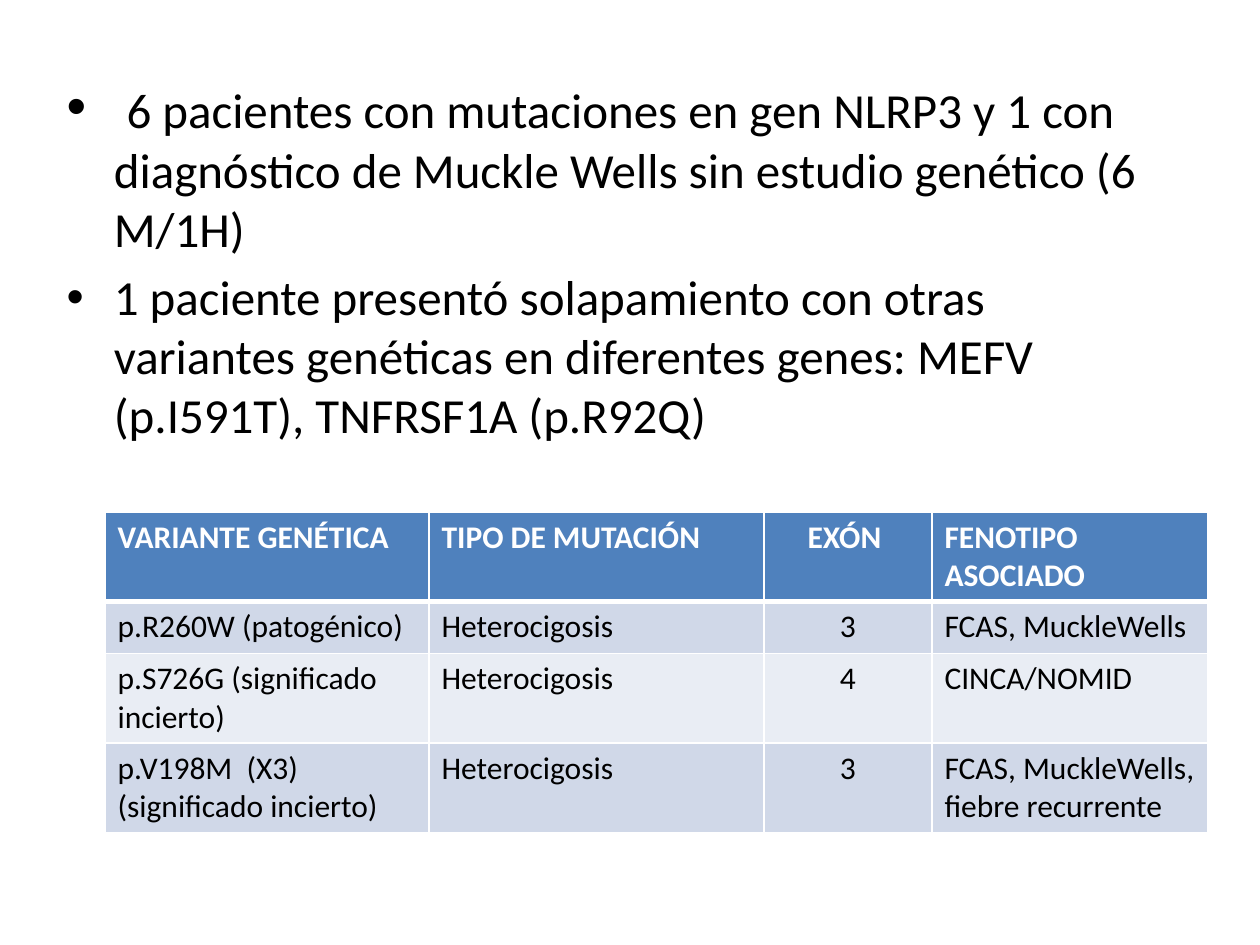
"""Builds a slide on NLRP3 mutations with two bullets and a table of variants."""
from lxml.etree import SubElement
from pptx import Presentation
from pptx.dml.color import RGBColor
from pptx.enum.text import PP_ALIGN
from pptx.oxml.ns import qn
from pptx.util import Emu, Pt

PX = 914400 / 126
COLORS = {"text": "000000", "white": "FFFFFF", "header": "4F81BD",
          "odd": "D0D8E8", "even": "E9EDF4"}
FINDINGS = [
    [(" ", 32), ("6 pacientes con mutaciones en gen NLRP3 y 1 con diagnóstico "
                 "de Muckle Wells sin estudio genético (6 M/1H)", 28)],
    [("1 paciente presentó solapamiento con otras variantes genéticas en "
      "diferentes genes: MEFV (p.I591T), TNFRSF1A (p.R92Q)", 28)],
]
VARIANTS = [
    ("VARIANTE GENÉTICA", "TIPO DE MUTACIÓN", "EXÓN ", "FENOTIPO ASOCIADO"),
    ("p.R260W (patogénico)", "Heterocigosis", "3", "FCAS, MuckleWells"),
    ("p.S726G (significado incierto)", "Heterocigosis", "4", "CINCA/NOMID"),
    ("p.V198M  (X3)(significado incierto)", "Heterocigosis", "3",
     "FCAS, MuckleWells, fiebre recurrente"),
]
COLUMN_WIDTHS = [324, 335, 168, 276]
ROW_HEIGHT = 52
EXON_COLUMN = 2
BODY_BOX = (54, 66, 1134, 764)
TABLE_LEFT, TABLE_TOP = 105, 512


def px(length):
    return Emu(round(length * PX))


def add_text(paragraph, text, size=18, color="text", bold=False, align=None):
    run = paragraph.add_run()
    run.text = text
    run.font.name = "Calibri"
    run.font.size = Pt(size)
    run.font.bold = bold
    run.font.color.rgb = RGBColor.from_string(COLORS[color])
    if align is not None:
        paragraph.alignment = align


def set_borders(cell, top, bottom):
    properties = cell._tc.get_or_add_tcPr()
    for side, width in (("L", 1), ("R", 1), ("T", top), ("B", bottom)):
        border = SubElement(properties, qn(f"a:ln{side}"), w=str(Pt(width)))
        fill = SubElement(border, qn("a:solidFill"))
        SubElement(fill, qn("a:srgbClr"), val=COLORS["white"])


def add_findings(slide):
    body = slide.placeholders[1]
    body.left, body.top, body.width, body.height = map(px, BODY_BOX)
    frame = body.text_frame
    for index, finding in enumerate(FINDINGS):
        paragraph = frame.add_paragraph() if index else frame.paragraphs[0]
        for text, size in finding:
            add_text(paragraph, text, size=size)


def add_variants(slide):
    table = slide.shapes.add_table(
        len(VARIANTS), len(COLUMN_WIDTHS), px(TABLE_LEFT), px(TABLE_TOP),
        px(sum(COLUMN_WIDTHS)), px(ROW_HEIGHT * len(VARIANTS))).table
    for column, width in zip(table.columns, COLUMN_WIDTHS):
        column.width = px(width)
    for row, values in enumerate(VARIANTS):
        table.rows[row].height = px(ROW_HEIGHT)
        header = row == 0
        band = "header" if header else "odd" if row % 2 else "even"
        for column, value in enumerate(values):
            cell = table.cell(row, column)
            set_borders(cell, top=3 if row == 1 else 1, bottom=3 if header else 1)
            cell.fill.solid()
            cell.fill.fore_color.rgb = RGBColor.from_string(COLORS[band])
            add_text(cell.text_frame.paragraphs[0], value, bold=header,
                     color="white" if header else "text",
                     align=PP_ALIGN.CENTER if column == EXON_COLUMN else None)


def main():
    presentation = Presentation()
    presentation.slide_width, presentation.slide_height = px(1260), px(945)
    slide = presentation.slides.add_slide(presentation.slide_layouts[1])
    title = slide.shapes.title.element
    title.getparent().remove(title)
    add_findings(slide)
    add_variants(slide)
    presentation.save("out.pptx")


if __name__ == "__main__":
    main()
